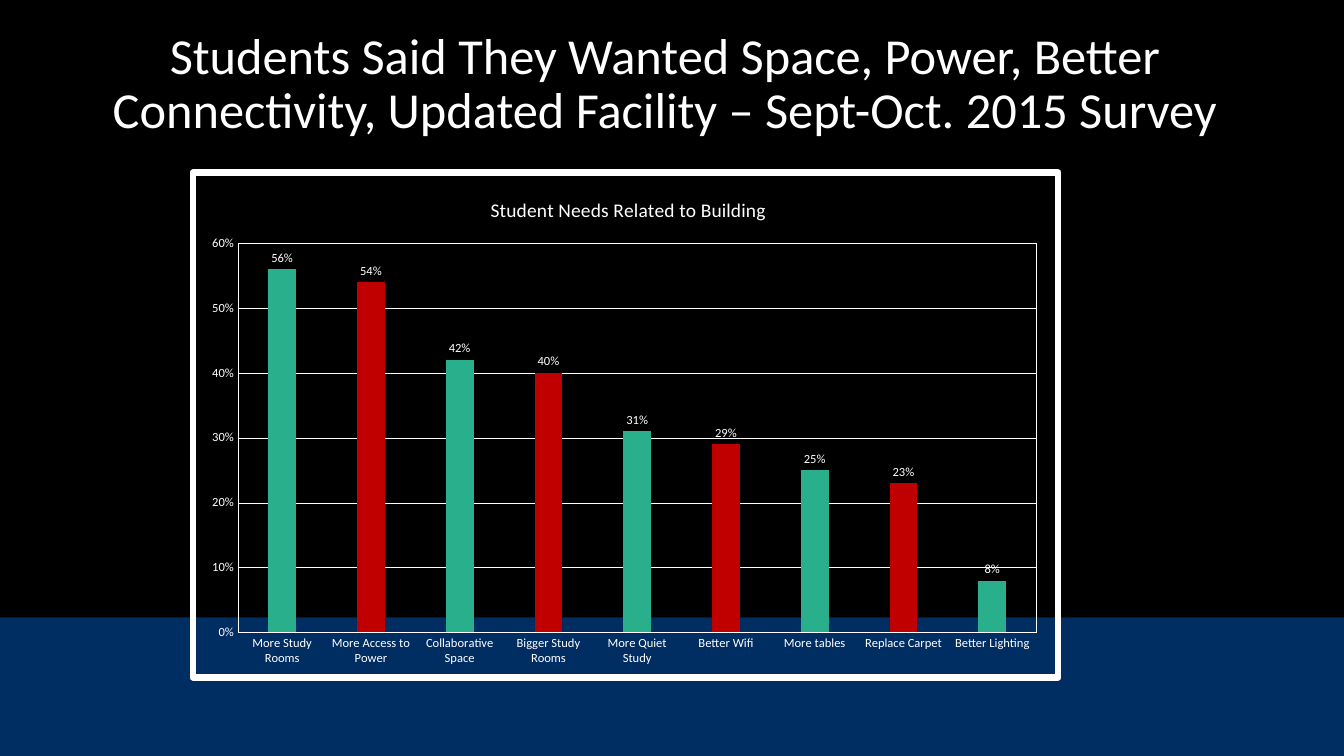
from dataclasses import dataclass
from typing import Any

import pptx
import pptx.chart.data
import pptx.dml.color
import pptx.enum.chart
import pptx.enum.shapes
import pptx.enum.text
import pptx.oxml
import pptx.oxml.ns
import pptx.util

Cm = pptx.util.Cm
Pt = pptx.util.Pt
qn = pptx.oxml.ns.qn

FACE = "Calibri"
WHITE, BLACK, NAVY = "FFFFFF", "000000", "002D62"
GREEN, RED = "29AF8C", "C00000"
WIDE, HIGH = 33.87, 19.05


@dataclass
class Need:
    name: str
    share: float


NEEDS = [
    Need("More Study Rooms", 0.56),
    Need("More Access to Power", 0.54),
    Need("Collaborative Space", 0.42),
    Need("Bigger Study Rooms", 0.40),
    Need("More Quiet Study", 0.31),
    Need("Better Wifi", 0.29),
    Need("More tables", 0.25),
    Need("Replace Carpet", 0.23),
    Need("Better Lighting", 0.08),
]


def color(code: str) -> pptx.dml.color.RGBColor:
    return pptx.dml.color.RGBColor.from_string(code)


def fill(form: Any, code: str) -> None:
    form.fill.solid()
    form.fill.fore_color.rgb = color(code)


def rule(line: Any, width: float) -> None:
    line.color.rgb = color(WHITE)
    line.width = Pt(width)


def style(font: Any, size: float) -> None:
    font.name = FACE
    font.size = Pt(size)
    font.bold = False
    font.color.rgb = color(WHITE)


def frame(width: float) -> Any:
    """Make an unfilled chart area outline with round corners."""
    spaces = pptx.oxml.ns.nsdecls("c", "a")
    return pptx.oxml.parse_xml(
        f'<c:spPr {spaces}><a:noFill/><a:ln w="{Pt(width)}"><a:solidFill>'
        f'<a:srgbClr val="{WHITE}"/></a:solidFill><a:round/></a:ln></c:spPr>'
    )


def place(part: Any, **spots: float | str) -> None:
    """Give a chart part a manual layout, in shares of the chart."""
    items = "".join(f'<c:{key} val="{val}"/>' for key, val in spots.items())
    layout = pptx.oxml.parse_xml(
        f'<c:layout {pptx.oxml.ns.nsdecls("c")}>'
        f"<c:manualLayout>{items}</c:manualLayout></c:layout>"
    )
    old = part.find(qn("c:layout"))
    if old is None:
        part.insert(0, layout)
    else:
        part.replace(old, layout)


def add_band(slide: Any) -> None:
    tall = 3.49
    band = slide.shapes.add_shape(
        pptx.enum.shapes.MSO_SHAPE.RECTANGLE,
        Cm(0), Cm(HIGH - tall), Cm(WIDE), Cm(tall),
    )
    band.shadow.inherit = False
    fill(band, NAVY)
    band.line.fill.background()


def add_title(slide: Any) -> None:
    box = slide.shapes.add_textbox(Cm(2.21), Cm(0.33), Cm(29.11), Cm(3.63))
    text = box.text_frame
    text.word_wrap = True
    text.vertical_anchor = pptx.enum.text.MSO_ANCHOR.MIDDLE
    text.text = (
        "Students Said They Wanted Space, Power, Better Connectivity, "
        "Updated Facility – Sept-Oct. 2015 Survey"
    )
    para = text.paragraphs[0]
    para.alignment = pptx.enum.text.PP_ALIGN.CENTER
    para.line_spacing = 0.9
    style(para.runs[0].font, 36)


def set_axes(chart: Any) -> None:
    none = pptx.enum.chart.XL_TICK_MARK.NONE
    for axis in (chart.category_axis, chart.value_axis):
        axis.major_tick_mark = none
        axis.minor_tick_mark = none
        style(axis.tick_labels.font, 9)
    rule(chart.category_axis.format.line, 0.75)
    scale = chart.value_axis
    scale.minimum_scale, scale.maximum_scale = 0, 0.6
    scale.major_unit = 0.1
    scale.format.line.fill.background()
    scale.has_major_gridlines = True
    rule(scale.major_gridlines.format.line, 0.25)
    scale.tick_labels.number_format = "0%"
    scale.tick_labels.number_format_is_linked = False


def set_bars(plot: Any) -> None:
    plot.gap_width, plot.overlap = 219, -27
    plot.vary_by_categories = False
    bars = plot.series[0]
    bars.invert_if_negative = False
    fill(bars.format, GREEN)
    for spot in range(1, len(NEEDS), 2):
        fill(bars.points[spot].format, RED)
    labels = bars.data_labels
    labels.show_value = True
    labels.number_format = "0%"
    labels.number_format_is_linked = False
    labels.position = pptx.enum.chart.XL_LABEL_POSITION.OUTSIDE_END
    style(labels.font, 9)


def add_chart(slide: Any) -> None:
    data = pptx.chart.data.CategoryChartData(number_format="0%")
    data.categories = [need.name for need in NEEDS]
    data.add_series("Series 1", [need.share for need in NEEDS])
    chart = slide.shapes.add_chart(
        pptx.enum.chart.XL_CHART_TYPE.COLUMN_CLUSTERED,
        Cm(4.78), Cm(4.27), Cm(21.97), Cm(12.88), data,
    ).chart
    style(chart.font, 10)
    chart.has_legend = False
    chart.has_title = True
    title = chart.chart_title
    title.text_frame.text = "Student Needs Related to Building"
    style(title.text_frame.paragraphs[0].runs[0].font, 14)
    set_axes(chart)
    set_bars(chart.plots[0])

    root = chart.element.find(qn("c:chart"))
    root.addnext(frame(4.5))
    area = root.find(qn("c:plotArea"))
    area.append(frame(0.25))
    place(root.find(qn("c:title")), xMode="edge", yMode="edge", x=0.34, y=0.04)
    place(area, layoutTarget="inner", xMode="edge", yMode="edge",
          x=0.052, y=0.14, w=0.923, h=0.771)


def main() -> None:
    deck = pptx.Presentation()
    deck.slide_width, deck.slide_height = Cm(WIDE), Cm(HIGH)
    slide = deck.slides.add_slide(deck.slide_layouts[6])
    fill(slide.background, BLACK)
    add_band(slide)
    add_title(slide)
    add_chart(slide)
    deck.save("out.pptx")


if __name__ == "__main__":
    main()
